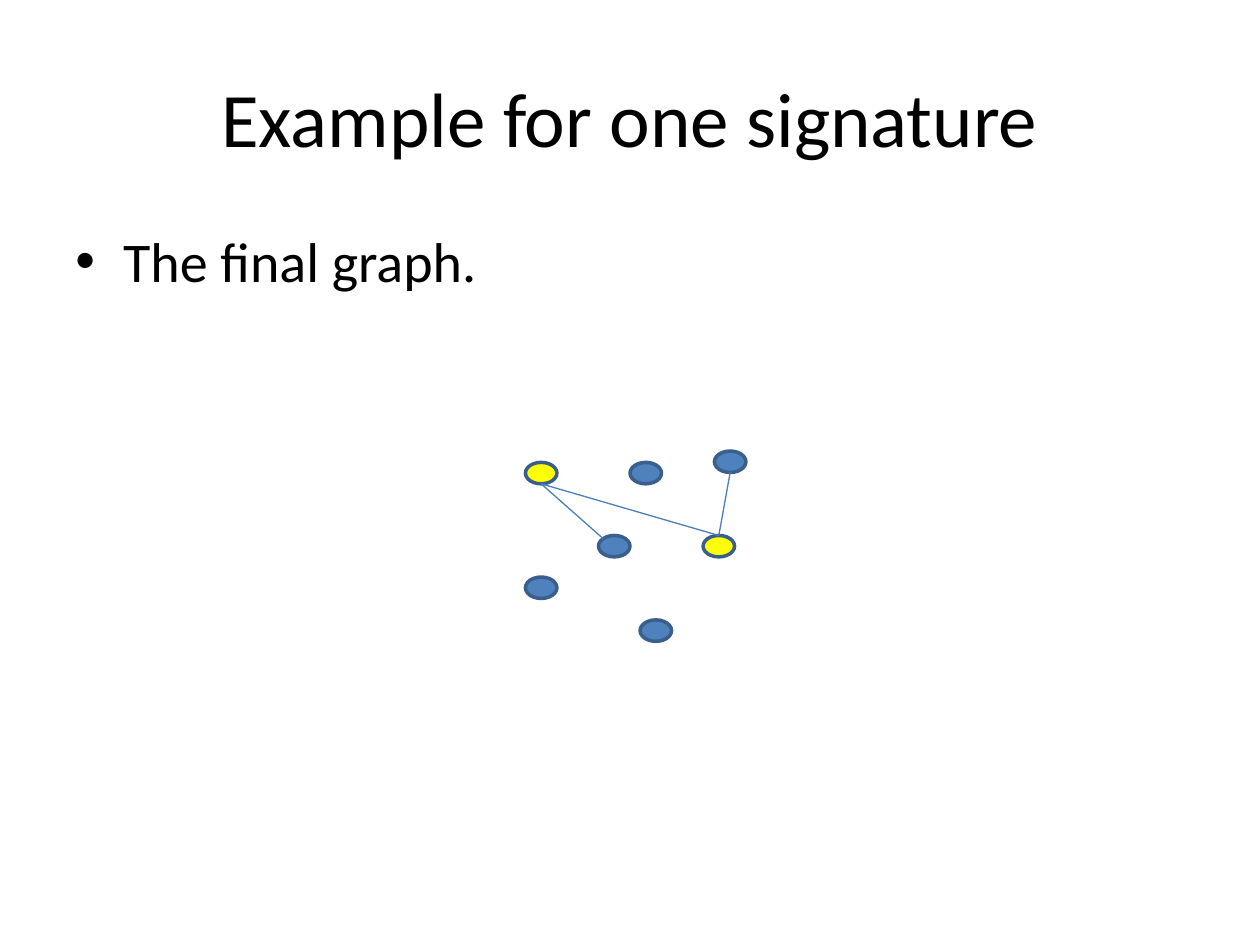
"""Build a slide showing the final graph for one signature."""
import dataclasses

import lxml.etree
import pptx
import pptx.dml.color
import pptx.enum.shapes
import pptx.enum.text
import pptx.oxml.ns
import pptx.presentation
import pptx.shapes.connector
import pptx.shapes.autoshape
import pptx.slide
import pptx.text.text
import pptx.util

Inches = pptx.util.Inches
Pt = pptx.util.Pt
Color = pptx.dml.color.RGBColor
Align = pptx.enum.text.PP_ALIGN
Anchor = pptx.enum.text.MSO_ANCHOR

BLACK = Color(0x00, 0x00, 0x00)
YELLOW = Color(0xFF, 0xFF, 0x00)
BLUE = Color(0x4F, 0x81, 0xBD)
RIM = Color(0x3A, 0x5F, 0x8C)
EDGE = Color(0x4B, 0x7E, 0xBC)
FONT = "Calibri"
WIDE, HIGH = 0.25, 0.17


@dataclasses.dataclass(frozen=True)
class Node:
    left: float
    top: float
    fill: Color = BLUE

    def point(self, across: float, down: float) -> tuple[float, float]:
        return self.left + across * WIDE, self.top + down * HIGH


@dataclasses.dataclass(frozen=True)
class Edge:
    start: tuple[float, float]
    end: tuple[float, float]


@dataclasses.dataclass(frozen=True)
class Label:
    text: str
    top: float
    height: float
    size: int
    align: Align
    anchor: Anchor


HUB = Node(4.17, 3.67, YELLOW)
MATE = Node(5.58, 4.25, YELLOW)
NEAR = Node(4.75, 4.25)
FAR = Node(5.67, 3.58)
NODES = (HUB, MATE, NEAR, Node(4.17, 4.58), Node(5.08, 4.92),
         Node(5, 3.67), FAR)

TOP = (0.5, 0)
BASE = (0.5, 1)
CORNER = (0.15, 0.15)
EDGES = (
    Edge(HUB.point(*BASE), NEAR.point(*CORNER)),
    Edge(FAR.point(*BASE), MATE.point(*TOP)),
    Edge(HUB.point(*BASE), MATE.point(*TOP)),
)

TITLE = Label("Example for one signature", 0.3, 1.25, 44,
              Align.CENTER, Anchor.MIDDLE)
BODY = Label("The final graph.", 1.75, 4.95, 32, Align.LEFT, Anchor.TOP)


def add_label(slide: pptx.slide.Slide, label: Label) -> pptx.text.text._Paragraph:
    box = slide.shapes.add_textbox(
        Inches(0.5), Inches(label.top), Inches(9), Inches(label.height))
    frame = box.text_frame
    frame.word_wrap = True
    frame.vertical_anchor = label.anchor
    line = frame.paragraphs[0]
    line.alignment = label.align
    run = line.add_run()
    run.text = label.text
    run.font.name = FONT
    run.font.size = Pt(label.size)
    run.font.color.rgb = BLACK
    return line


def add_bullet(line: pptx.text.text._Paragraph) -> None:
    line.space_before = Pt(6.4)
    props = line._p.get_or_add_pPr()
    props.set("marL", str(Inches(0.38)))
    props.set("indent", str(Inches(-0.38)))
    font = lxml.etree.SubElement(props, pptx.oxml.ns.qn("a:buFont"))
    font.set("typeface", "Arial")
    mark = lxml.etree.SubElement(props, pptx.oxml.ns.qn("a:buChar"))
    mark.set("char", "•")


def add_node(slide: pptx.slide.Slide, node: Node) -> pptx.shapes.autoshape.Shape:
    oval = slide.shapes.add_shape(
        pptx.enum.shapes.MSO_SHAPE.OVAL,
        Inches(node.left), Inches(node.top), Inches(WIDE), Inches(HIGH))
    oval.shadow.inherit = False
    oval.fill.solid()
    oval.fill.fore_color.rgb = node.fill
    oval.line.color.rgb = RIM
    oval.line.width = Pt(2)
    return oval


def add_edge(slide: pptx.slide.Slide, edge: Edge) -> pptx.shapes.connector.Connector:
    ends = [Inches(value) for value in edge.start + edge.end]
    link = slide.shapes.add_connector(
        pptx.enum.shapes.MSO_CONNECTOR.STRAIGHT, *ends)
    link.line.color.rgb = EDGE
    link.line.width = Pt(0.75)
    lxml.etree.SubElement(link._element.spPr, pptx.oxml.ns.qn("a:effectLst"))
    return link


def main() -> None:
    deck = pptx.Presentation()
    deck.slide_width = Inches(10)
    deck.slide_height = Inches(7.5)
    slide = deck.slides.add_slide(deck.slide_layouts[6])
    add_label(slide, TITLE)
    add_bullet(add_label(slide, BODY))
    for node in NODES:
        add_node(slide, node)
    for edge in EDGES:
        add_edge(slide, edge)
    deck.save("out.pptx")


if __name__ == "__main__":
    main()
